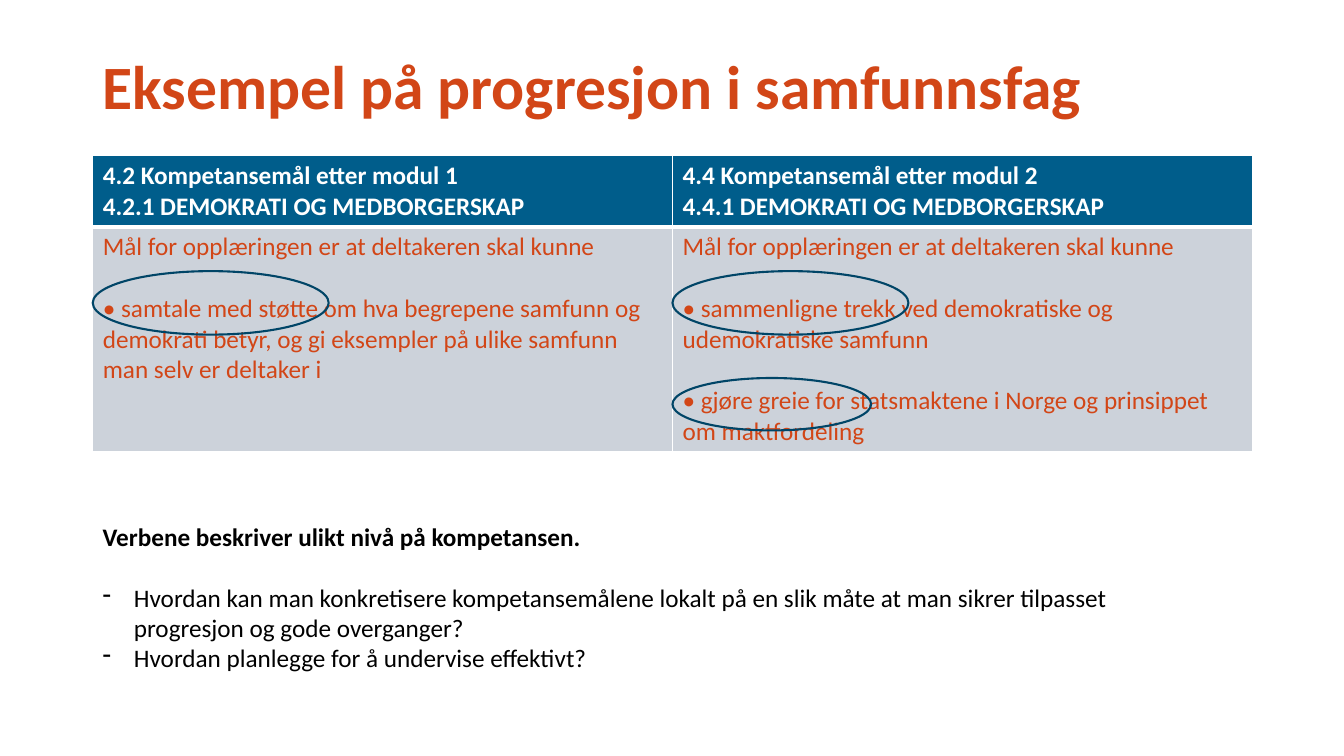
from lxml import etree
from pptx import Presentation
from pptx.dml.color import RGBColor
from pptx.enum.shapes import MSO_SHAPE
from pptx.enum.text import MSO_ANCHOR
from pptx.oxml.ns import qn
from pptx.util import Inches, Pt

OVAL = MSO_SHAPE.OVAL
MIDDLE, TOP = MSO_ANCHOR.MIDDLE, MSO_ANCHOR.TOP

ORANGE = RGBColor(0xD2, 0x46, 0x17)
BLUE = RGBColor(0x00, 0x5D, 0x8B)
NAVY = RGBColor(0x00, 0x45, 0x67)
GREY = RGBColor(0xCC, 0xD2, 0xDA)
WHITE = RGBColor(0xFF, 0xFF, 0xFF)
BLACK = RGBColor(0x00, 0x00, 0x00)

LEFT, WIDTH = 0.92, 11.5
COLUMN = WIDTH / 2
TABLE_TOP = 1.54
ROWS = (0.71, 2.23)
LINE_GAP = Pt(22)

TITLE = dict(name="Calibri", size=Pt(44), bold=True, color=ORANGE)
HEADER = dict(name="Calibri", size=Pt(18), bold=True, color=WHITE)
GOAL = HEADER | dict(bold=False, color=ORANGE)
LEAD = HEADER | dict(color=BLACK)
QUESTION = LEAD | dict(bold=False)

GOAL_INTRO = "Mål for opplæringen er at deltakeren skal kunne"
MODULES = [
    (
        ["4.2 Kompetansemål etter modul 1", "4.2.1 DEMOKRATI OG MEDBORGERSKAP"],
        [GOAL_INTRO,
         "• samtale med støtte om hva begrepene samfunn og demokrati betyr, "
         "og gi eksempler på ulike samfunn man selv er deltaker i"],
    ),
    (
        ["4.4 Kompetansemål etter modul 2", "4.4.1 DEMOKRATI OG MEDBORGERSKAP"],
        [GOAL_INTRO,
         "• sammenligne trekk ved demokratiske og udemokratiske samfunn",
         "• gjøre greie for statsmaktene i Norge og prinsippet om maktfordeling"],
    ),
]
QUESTIONS = [
    "Hvordan kan man konkretisere kompetansemålene lokalt på en slik måte "
    "at man sikrer tilpasset progresjon og gode overganger?",
    "Hvordan planlegge for å undervise effektivt?",
]
VERB_RINGS = [
    (LEFT, 2.69, 2.34, 0.63),
    (LEFT + COLUMN, 2.69, 2.34, 0.63),
    (LEFT + COLUMN, 3.75, 1.97, 0.52),
]


def set_font(font, style):
    """Apply a dict of format values to a font."""
    for key, value in style.items():
        if key == "color":
            font.color.rgb = value
        else:
            setattr(font, key, value)


def add_dash(p):
    """Give a paragraph a hanging dash bullet."""
    pPr = p._p.get_or_add_pPr()
    pPr.set("marL", str(Inches(0.31)))
    pPr.set("indent", str(-Inches(0.31)))
    etree.SubElement(pPr, qn("a:buChar"), char="-")


def write(tf, lines, style, gap=0, dash=False):
    """Write lines as paragraphs, with a gap before all but the frame's first."""
    for text in lines:
        first = not tf.paragraphs[0].runs
        p = tf.paragraphs[0] if first else tf.add_paragraph()
        if gap and not first:
            p.space_before = gap
        if dash:
            add_dash(p)
        r = p.add_run()
        r.text = text
        set_font(r.font, style)


def add_text(s, x, y, w, h, anchor):
    """Add a wrapping text box and return its frame."""
    tf = s.shapes.add_textbox(Inches(x), Inches(y), Inches(w), Inches(h)).text_frame
    tf.word_wrap = True
    tf.vertical_anchor = anchor
    return tf


def set_borders(cell, widths):
    """Draw white cell borders with the given widths in points."""
    tcPr = cell._tc.get_or_add_tcPr()
    for side, width in widths.items():
        ln = etree.SubElement(tcPr, qn(f"a:ln{side}"), w=str(Pt(width)))
        fill = etree.SubElement(ln, qn("a:solidFill"))
        etree.SubElement(fill, qn("a:srgbClr"), val=str(WHITE))


def fill_cell(cell, lines, style, color, borders, gap=0):
    """Write and colour one table cell."""
    set_borders(cell, borders)
    cell.fill.solid()
    cell.fill.fore_color.rgb = color
    write(cell.text_frame, lines, style, gap)


def add_goals(s):
    """Add the table that compares the goals of the modules."""
    frame = s.shapes.add_table(len(ROWS), len(MODULES), Inches(LEFT), Inches(TABLE_TOP),
                               Inches(WIDTH), Inches(sum(ROWS)))
    table = frame.table
    for row, height in zip(table.rows, ROWS):
        row.height = Inches(height)
    for col, (header, goals) in enumerate(MODULES):
        table.columns[col].width = Inches(COLUMN)
        fill_cell(table.cell(0, col), header, HEADER, BLUE, dict(L=1, R=1, T=1, B=3))
        fill_cell(table.cell(1, col), goals, GOAL, GREY, dict(L=1, R=1, T=3, B=1), LINE_GAP)


def add_ring(s, x, y, w, h):
    """Add an unfilled ellipse around a verb."""
    sp = s.shapes.add_shape(OVAL, Inches(x), Inches(y), Inches(w), Inches(h))
    sp.shadow.inherit = False
    sp.fill.background()
    sp.line.color.rgb = NAVY
    sp.line.width = Pt(1.5)


def main():
    """Build the slide and save it."""
    prs = Presentation()
    prs.slide_width, prs.slide_height = Inches(13.33), Inches(7.5)
    s = prs.slides.add_slide(prs.slide_layouts[6])
    title = add_text(s, LEFT, 0.4, WIDTH, 0.97, MIDDLE)
    write(title, ["Eksempel på progresjon i samfunnsfag"], TITLE)
    title.paragraphs[0].line_spacing = 0.9
    add_goals(s)
    for ring in VERB_RINGS:
        add_ring(s, *ring)
    tf = add_text(s, LEFT, 5.12, 11.07, 1.92, TOP)
    write(tf, ["Verbene beskriver ulikt nivå på kompetansen."], LEAD)
    tf.paragraphs[0].space_after = LINE_GAP
    write(tf, QUESTIONS, QUESTION, dash=True)
    prs.save("out.pptx")


if __name__ == "__main__":
    main()
